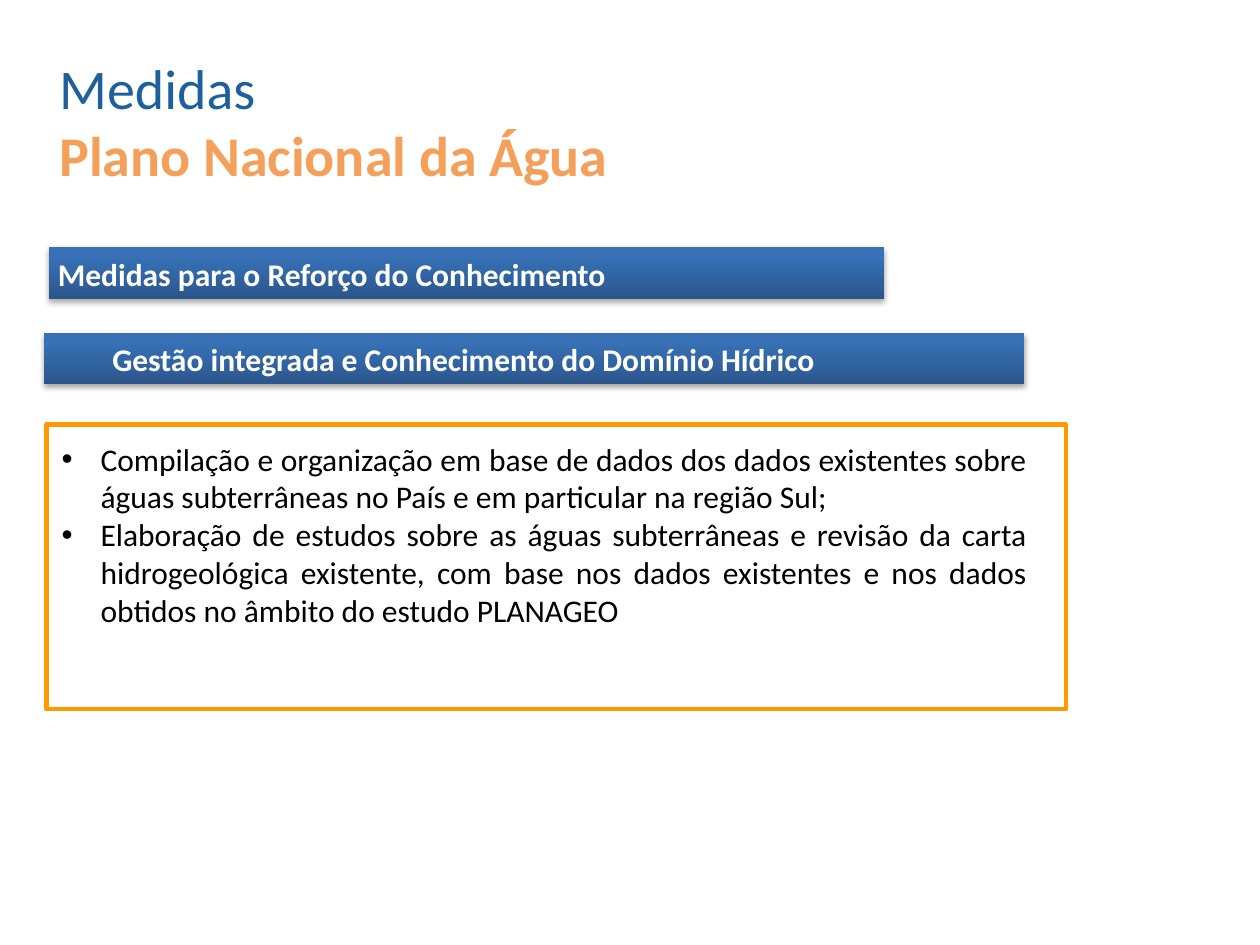
"""Build the slide on the measures of the Plano Nacional da Água."""
from copy import deepcopy
from dataclasses import dataclass

from lxml.etree import SubElement
from pptx import Presentation
from pptx.dml.color import RGBColor
from pptx.enum.shapes import MSO_SHAPE
from pptx.enum.text import MSO_ANCHOR, PP_ALIGN
from pptx.oxml.ns import qn
from pptx.shapes.autoshape import Shape
from pptx.slide import Slide
from pptx.text.text import _Paragraph, _Run
from pptx.util import Inches, Pt

FONT = "Calibri"
TITLE_BLUE = RGBColor(0x1E, 0x60, 0x9B)
TITLE_ORANGE = RGBColor(0xF4, 0xA0, 0x5A)
FRAME_ORANGE = RGBColor(0xFF, 0x99, 0x00)
BLACK = RGBColor(0, 0, 0)
WHITE = RGBColor(0xFF, 0xFF, 0xFF)
BANNER_STOPS = (
    (0, RGBColor(0x2B, 0x56, 0x8C)),
    (0.8, RGBColor(0x37, 0x70, 0xB5)),
    (1, RGBColor(0x35, 0x70, 0xB8)),
)


@dataclass(frozen=True)
class Box:
    left: float
    top: float
    width: float
    height: float

    def emu(self) -> tuple[int, ...]:
        return tuple(Inches(v) for v in (self.left, self.top, self.width, self.height))


@dataclass(frozen=True)
class Banner:
    text: str
    bar: Box
    label: Box
    align: PP_ALIGN


BANNERS = (
    Banner("Medidas para o Reforço do Conhecimento",
           Box(0.39, 1.96, 6.63, 0.41), Box(0.45, 1.99, 6.63, 0.41), PP_ALIGN.JUSTIFY),
    Banner("Gestão integrada e Conhecimento do Domínio Hídrico",
           Box(0.35, 2.64, 7.78, 0.41), Box(-0.21, 2.66, 7.78, 0.41), PP_ALIGN.CENTER),
)
MEASURES = (
    "Compilação e organização em base de dados dos dados existentes sobre águas "
    "subterrâneas no País e em particular na região Sul;",
    "Elaboração de estudos sobre as águas subterrâneas e revisão da carta hidrogeológica "
    "existente, com base nos dados existentes e nos dados obtidos no âmbito do estudo PLANAGEO",
)


def format_run(run: _Run, size: float, color: RGBColor, bold: bool = False) -> None:
    """Set the font of one run."""
    run.font.name = FONT
    run.font.size = Pt(size)
    run.font.bold = bold
    run.font.color.rgb = color


def add_title(slide: Slide) -> None:
    """Fill the title placeholder with its two lines."""
    title = slide.shapes.title
    title.left, title.top, title.width, title.height = Box(0.37, 0.33, 7.18, 1.25).emu()
    title.text_frame.text = "Medidas \vPlano Nacional da Água"
    title.text_frame.vertical_anchor = MSO_ANCHOR.MIDDLE
    heading = title.text_frame.paragraphs[0]
    heading.alignment = PP_ALIGN.LEFT
    topic, plan = heading.runs
    format_run(topic, 32, TITLE_BLUE)
    format_run(plan, 32, TITLE_ORANGE, bold=True)


def add_rectangle(slide: Slide, box: Box) -> Shape:
    """Add a rectangle without a shadow."""
    rectangle = slide.shapes.add_shape(MSO_SHAPE.RECTANGLE, *box.emu())
    rectangle.shadow.inherit = False
    return rectangle


def paint_banner(bar: Shape) -> None:
    """Give a bar its gradient and its soft shadow."""
    bar.line.fill.background()
    bar.fill.gradient()
    bar.fill.gradient_angle = 90
    properties = bar._element.spPr
    stop_list = properties.find(".//" + qn("a:gsLst"))
    stop_list.append(deepcopy(stop_list[-1]))
    for stop, (position, color) in zip(bar.fill.gradient_stops, BANNER_STOPS):
        stop.position = position
        stop.color.rgb = color
    shadow = SubElement(properties.find(qn("a:effectLst")), qn("a:outerShdw"),
                        blurRad="40000", dist="23000", dir="5400000", rotWithShape="0")
    shade = SubElement(shadow, qn("a:srgbClr"), val="000000")
    SubElement(shade, qn("a:alpha"), val="35000")


def add_banner(slide: Slide, banner: Banner) -> None:
    """Draw a gradient bar and its label."""
    paint_banner(add_rectangle(slide, banner.bar))
    frame = slide.shapes.add_textbox(*banner.label.emu()).text_frame
    frame.word_wrap = True
    frame.vertical_anchor = MSO_ANCHOR.MIDDLE
    frame.margin_left = frame.margin_right = Inches(0.01)
    frame.margin_top = frame.margin_bottom = Inches(0.01)
    frame.text = banner.text
    label = frame.paragraphs[0]
    label.alignment = banner.align
    label.line_spacing = 0.9
    format_run(label.runs[0], 18, WHITE, bold=True)


def add_bullet(paragraph: _Paragraph) -> None:
    """Put a hanging bullet before a paragraph."""
    properties = paragraph._p.get_or_add_pPr()
    properties.set("marL", str(Inches(0.31)))
    properties.set("indent", str(-Inches(0.31)))
    SubElement(properties, qn("a:buFont"), typeface="Arial")
    SubElement(properties, qn("a:buChar"), char="•")


def add_measures(slide: Slide) -> None:
    """Draw the framed list of measures."""
    border = add_rectangle(slide, Box(0.37, 3.37, 8.09, 2.26))
    border.fill.background()
    border.line.color.rgb = FRAME_ORANGE
    border.line.width = Pt(2.5)
    frame = slide.shapes.add_textbox(*Box(0.39, 3.44, 7.86, 1.92).emu()).text_frame
    frame.word_wrap = True
    frame.text = "\n".join(MEASURES)
    for measure in frame.paragraphs:
        add_bullet(measure)
        measure.alignment = PP_ALIGN.JUSTIFY
        format_run(measure.runs[0], 18, BLACK)


def main() -> None:
    """Build and save the presentation."""
    presentation = Presentation()
    presentation.slide_width = Inches(10)
    presentation.slide_height = Inches(7.5)
    slide = presentation.slides.add_slide(presentation.slide_layouts[5])
    add_title(slide)
    for banner in BANNERS:
        add_banner(slide, banner)
    add_measures(slide)
    presentation.save("out.pptx")


if __name__ == "__main__":
    main()
